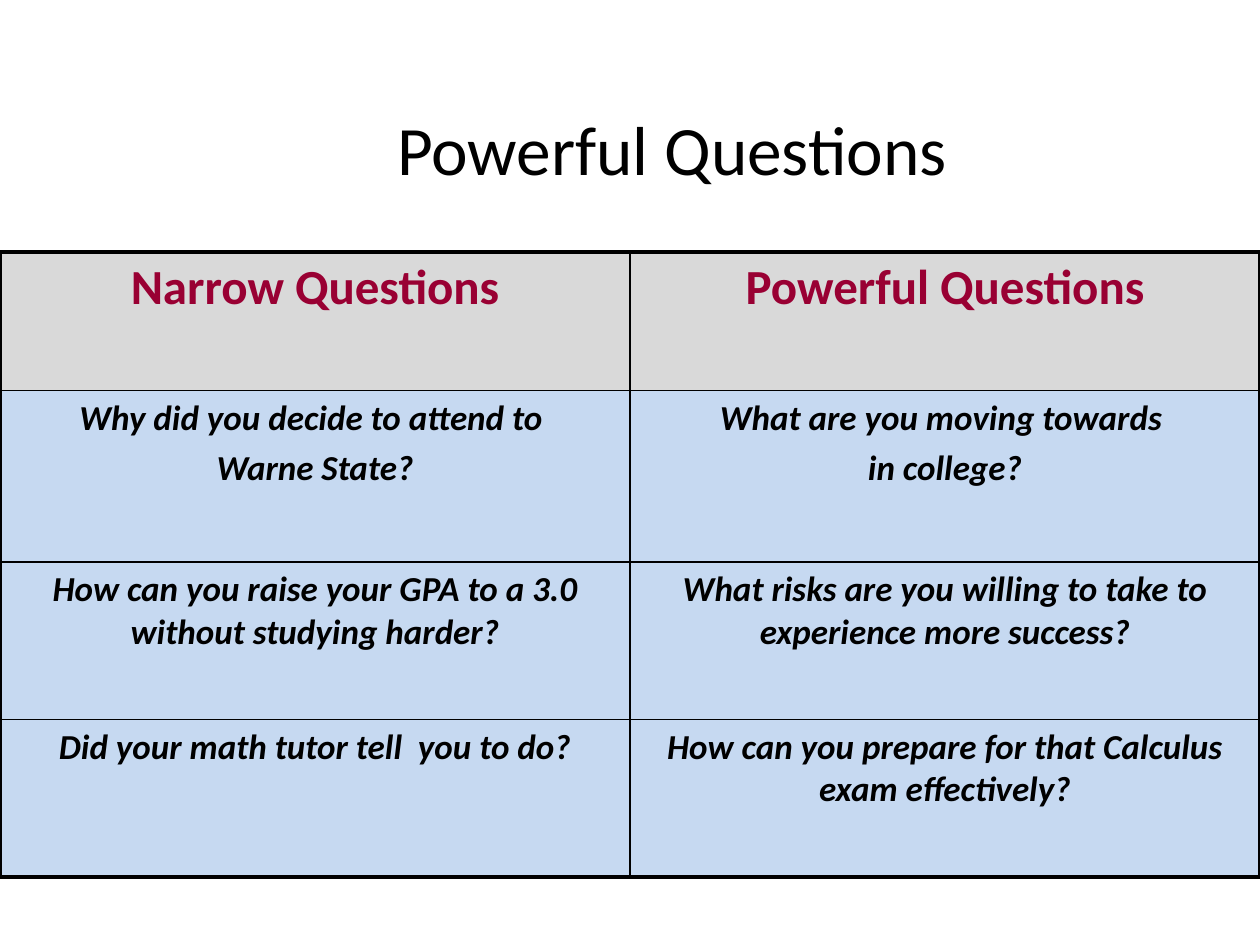
"""Build a slide that contrasts narrow and powerful questions in a table."""
from lxml import etree
from pptx import Presentation
from pptx.dml.color import RGBColor
from pptx.enum.text import MSO_ANCHOR, PP_ALIGN
from pptx.oxml.ns import qn
from pptx.util import Inches, Pt

CENTER = PP_ALIGN.CENTER
MIDDLE = MSO_ANCHOR.MIDDLE
BLACK = RGBColor(0x00, 0x00, 0x00)
CRIMSON = RGBColor(0x99, 0x00, 0x33)
GRAY = RGBColor(0xD9, 0xD9, 0xD9)
LIGHT_BLUE = RGBColor(0xC6, 0xD9, 0xF1)

TITLE = "Powerful Questions"
ROWS = [
    (["Narrow Questions"], ["Powerful Questions"]),
    (["Why did you decide to attend to ", "Warne State?"],
     ["What are you moving towards ", "in college?"]),
    (["How can you raise your GPA to a 3.0 without studying harder?"],
     ["What risks are you willing to take to experience more success?"]),
    (["Did your math tutor tell  you to do?"],
     ["How can you prepare for that Calculus exam effectively?"]),
]
ROW_HEIGHTS = [1.1, 1.36, 1.25, 1.25]
SLIDE_WIDTH, SLIDE_HEIGHT = 10, 7.5
TABLE_TOP = 2
TITLE_BOX = (0.67, 0.83, 9.33, 0.69)
OUTER_LINE, INNER_LINE = 2.25, 1
SPACE_SHARE = 0.2

TITLE_FORMAT = {"name": "Calibri", "size": Pt(39.6)}
HEADER_FORMAT = {"name": "Calibri", "size": Pt(28), "bold": True, "italic": False}
BODY_FORMAT = {"name": "Calibri", "size": Pt(20), "bold": True, "italic": True}


def write(text_frame, lines, font_format, color, space_share=0):
    """Write centred lines as paragraphs with one format."""
    for index, line in enumerate(lines):
        paragraph = text_frame.add_paragraph() if index else text_frame.paragraphs[0]
        paragraph.alignment = CENTER
        paragraph.space_before = Pt(font_format["size"].pt * space_share)
        run = paragraph.add_run()
        run.text = line
        for attribute, value in font_format.items():
            setattr(run.font, attribute, value)
        run.font.color.rgb = color


def add_borders(cell, outer_sides):
    """Draw the four cell borders, thicker on the outer sides."""
    properties = cell._tc.get_or_add_tcPr()
    for side, is_outer in outer_sides.items():
        width = Pt(OUTER_LINE if is_outer else INNER_LINE)
        line = etree.SubElement(properties, qn(f"a:ln{side}"), w=str(width))
        fill = etree.SubElement(line, qn("a:solidFill"))
        etree.SubElement(fill, qn("a:srgbClr"), val=str(BLACK))


def add_title(slide):
    """Add the slide title."""
    text_frame = slide.shapes.add_textbox(*map(Inches, TITLE_BOX)).text_frame
    text_frame.word_wrap = True
    text_frame.vertical_anchor = MIDDLE
    write(text_frame, [TITLE], TITLE_FORMAT, BLACK)


def add_question_table(slide):
    """Add the table of questions across the full slide width."""
    row_count, column_count = len(ROWS), len(ROWS[0])
    table = slide.shapes.add_table(
        row_count, column_count, 0, Inches(TABLE_TOP),
        Inches(SLIDE_WIDTH), Inches(sum(ROW_HEIGHTS))).table
    table.first_row = table.horz_banding = False
    for row_index, (row, height) in enumerate(zip(ROWS, ROW_HEIGHTS)):
        table.rows[row_index].height = Inches(height)
        is_header = row_index == 0
        font_format = HEADER_FORMAT if is_header else BODY_FORMAT
        for column_index, lines in enumerate(row):
            cell = table.cell(row_index, column_index)
            add_borders(cell, {
                "L": column_index == 0, "R": column_index == column_count - 1,
                "T": is_header, "B": row_index == row_count - 1})
            cell.fill.solid()
            cell.fill.fore_color.rgb = GRAY if is_header else LIGHT_BLUE
            write(cell.text_frame, lines, font_format,
                  CRIMSON if is_header else BLACK, SPACE_SHARE)


def main():
    """Build and save the presentation."""
    presentation = Presentation()
    presentation.slide_width = Inches(SLIDE_WIDTH)
    presentation.slide_height = Inches(SLIDE_HEIGHT)
    slide = presentation.slides.add_slide(presentation.slide_layouts[6])
    add_title(slide)
    add_question_table(slide)
    presentation.save("out.pptx")


if __name__ == "__main__":
    main()
